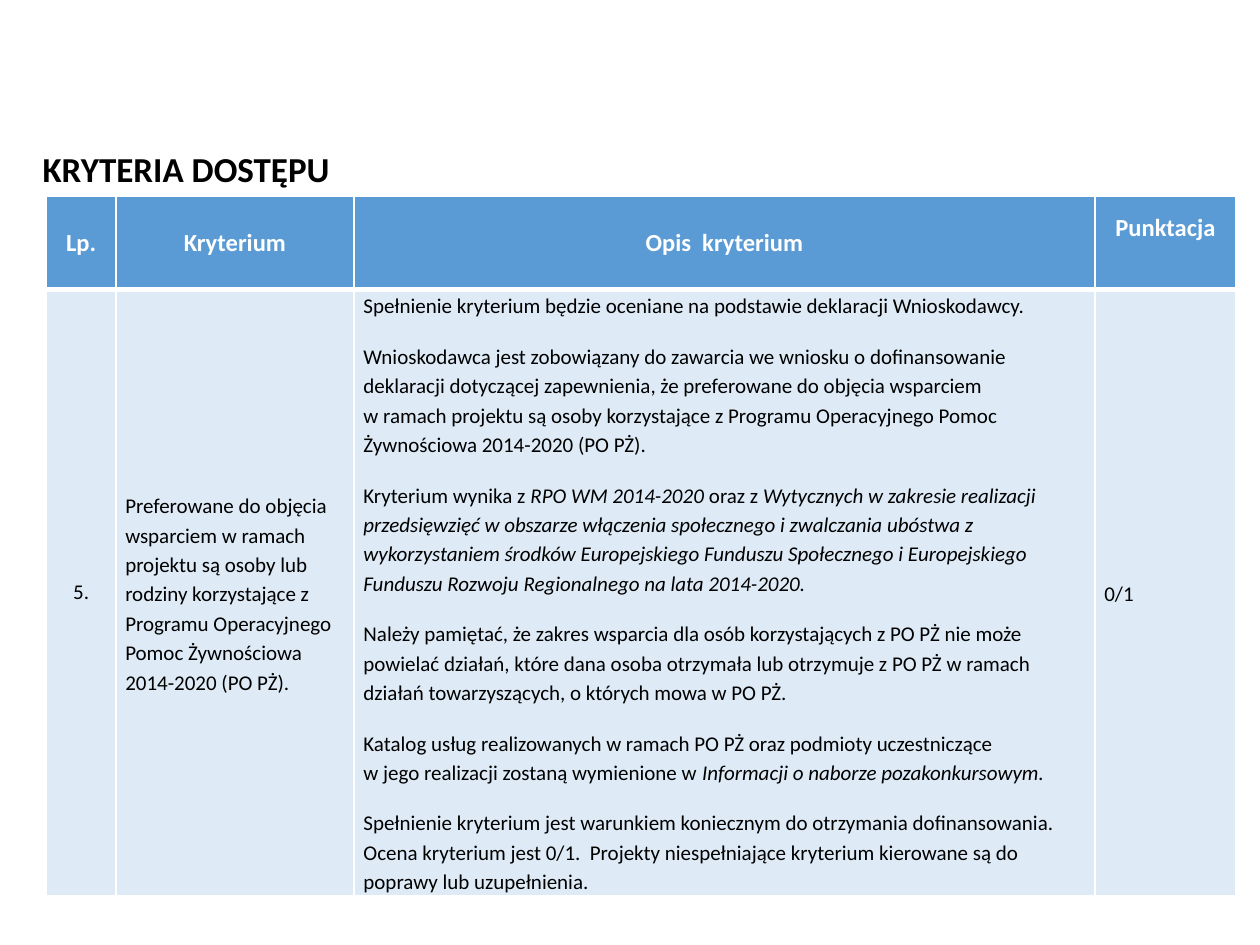
from lxml.etree import SubElement
from pptx import Presentation
from pptx.dml.color import RGBColor
from pptx.enum.text import MSO_ANCHOR, PP_ALIGN
from pptx.oxml.ns import qn
from pptx.util import Pt

# Content: a paragraph is a list of (text, italic) runs
TITLE = "KRYTERIA DOSTĘPU"
HEADERS = ["Lp.", "Kryterium", "Opis  kryterium", "Punktacja"]
NUMBER = [[("5.", False)]]
CRITERION = [[(
    "Preferowane do objęcia wsparciem w ramach projektu są osoby lub rodziny "
    "korzystające z Programu Operacyjnego Pomoc Żywnościowa 2014-2020 (PO PŻ).", False)]]
DESCRIPTION = [
    [("Spełnienie kryterium będzie oceniane na podstawie deklaracji Wnioskodawcy.", False)],
    [("Wnioskodawca jest zobowiązany do zawarcia we wniosku o dofinansowanie deklaracji "
      "dotyczącej zapewnienia, że preferowane do objęcia wsparciem \n"
      "w ramach projektu są osoby korzystające z Programu Operacyjnego Pomoc Żywnościowa "
      "2014-2020 (PO PŻ).", False)],
    [("Kryterium wynika z", False),
     (" RPO WM 2014-2020 ", True),
     ("oraz z ", False),
     ("Wytycznych w zakresie realizacji przedsięwzięć w obszarze włączenia społecznego "
      "i zwalczania ubóstwa z wykorzystaniem środków Europejskiego Funduszu Społecznego "
      "i Europejskiego Funduszu Rozwoju Regionalnego na lata 2014-2020.", True)],
    [("Należy pamiętać, że zakres wsparcia dla osób korzystających z PO PŻ nie może "
      "powielać działań, które dana osoba otrzymała lub otrzymuje z PO PŻ w ramach działań "
      "towarzyszących, o których mowa w PO PŻ.", False)],
    [("Katalog usług realizowanych w ramach PO PŻ oraz podmioty uczestniczące \n"
      "w jego realizacji zostaną wymienione w ", False),
     ("Informacji o naborze pozakonkursowym.", True)],
    [("Spełnienie kryterium jest warunkiem koniecznym do otrzymania dofinansowania. Ocena "
      "kryterium jest 0/1.  Projekty niespełniające kryterium kierowane są do poprawy lub "
      "uzupełnienia.", False)],
]
SCORE = [[("0/1", False)]]
BODY = [NUMBER, CRITERION, DESCRIPTION, SCORE]

# Layout in points
COLUMN_WIDTHS = [39.6, 136.1, 423.4, 80.6]
ROW_HEIGHTS = [53.3, 346.3]
TABLE_LEFT, TABLE_TOP = 26.6, 112.3
WHITE, BLACK, BLUE, PALE_BLUE = "FFFFFF", "000000", "5B9BD5", "DEEBF7"


def color(value):
    return RGBColor.from_string(value)


def write(frame, paragraphs, size=12, fill=BLACK, bold=False, align=PP_ALIGN.LEFT,
          line_spacing=None, gap=0):
    for index, runs in enumerate(paragraphs):
        paragraph = frame.add_paragraph() if index else frame.paragraphs[0]
        paragraph.alignment = align
        if line_spacing:
            paragraph.line_spacing = line_spacing
        paragraph.space_before = Pt(gap if index else 0)
        paragraph.space_after = Pt(gap)
        for text, italic in runs:
            for part, line in enumerate(text.split("\n")):
                if part:
                    paragraph.add_line_break()
                run = paragraph.add_run()
                run.text = line
                font = run.font
                font.name, font.size = "Calibri", Pt(size)
                font.bold, font.italic = bold, italic
                font.color.rgb = color(fill)


def style_cell(cell, fill, top=1, bottom=1):
    properties = cell._tc.get_or_add_tcPr()
    for side, width in (("L", 1), ("R", 1), ("T", top), ("B", bottom)):
        border = SubElement(properties, qn(f"a:ln{side}"), w=str(Pt(width)))
        SubElement(SubElement(border, qn("a:solidFill")), qn("a:srgbClr"), val=WHITE)
    cell.fill.solid()
    cell.fill.fore_color.rgb = color(fill)
    cell.vertical_anchor = MSO_ANCHOR.MIDDLE


presentation = Presentation()
presentation.slide_width, presentation.slide_height = Pt(720), Pt(540)
slide = presentation.slides.add_slide(presentation.slide_layouts[6])

# Criteria table
table = slide.shapes.add_table(
    len(ROW_HEIGHTS), len(COLUMN_WIDTHS), Pt(TABLE_LEFT), Pt(TABLE_TOP),
    Pt(sum(COLUMN_WIDTHS)), Pt(sum(ROW_HEIGHTS))).table
for column, width in zip(table.columns, COLUMN_WIDTHS):
    column.width = Pt(width)
for row, height in zip(table.rows, ROW_HEIGHTS):
    row.height = Pt(height)

for index, (header, paragraphs) in enumerate(zip(HEADERS, BODY)):
    head, body = table.cell(0, index), table.cell(1, index)
    style_cell(head, BLUE, bottom=3)
    write(head.text_frame, [[(header, False)]], size=14, fill=WHITE, bold=True,
          align=PP_ALIGN.CENTER)
    style_cell(body, PALE_BLUE, top=3)
    if index == 0:
        write(body.text_frame, paragraphs, align=PP_ALIGN.CENTER)
    else:
        body.margin_left = body.margin_right = Pt(5.4)
        body.margin_top = body.margin_bottom = Pt(0)
        write(body.text_frame, paragraphs, line_spacing=1.15, gap=6)

# The last header sits above the middle of its cell
table.cell(0, len(HEADERS) - 1).margin_bottom = Pt(20.6)

# Title
title = slide.shapes.add_textbox(Pt(17.3), Pt(80.6), Pt(266.4), Pt(31.7))
title.text_frame.word_wrap = True
title.text_frame.vertical_anchor = MSO_ANCHOR.MIDDLE
write(title.text_frame, [[(TITLE, False)]], size=20, bold=True)

presentation.save("out.pptx")
